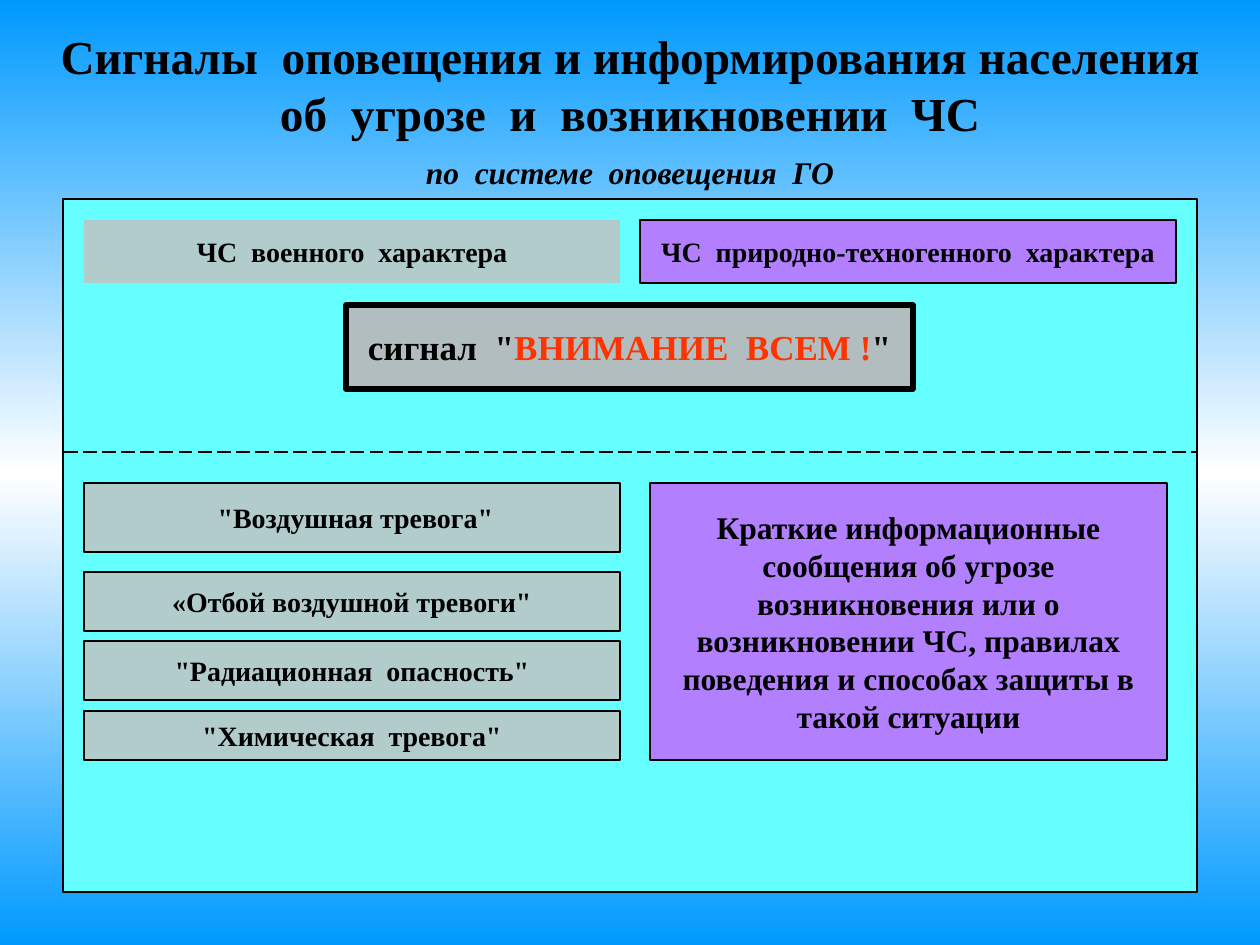
from copy import deepcopy

from lxml.etree import SubElement
from pptx import Presentation
from pptx.dml.color import RGBColor
from pptx.enum.dml import MSO_LINE
from pptx.enum.shapes import MSO_CONNECTOR, MSO_SHAPE
from pptx.enum.text import MSO_ANCHOR, MSO_AUTO_SIZE, PP_ALIGN
from pptx.oxml.ns import qn
from pptx.util import Emu, Pt

PX = 914400 // 126
FONT = "Times New Roman"
BLACK, RED, CYAN = "000000", "FF3300", "66FFFF"
ROSE, CORAL, MAGENTA = "FF9999", "FF7C80", "FF00FF"
BACKGROUND = [(0, "0099FF"), (0.5, "FFFFFF"), (1, "0099FF")]

TITLE = "Сигналы  оповещения и информирования населения\vоб  угрозе  и  возникновении  ЧС"
SUBTITLE = "по  системе  оповещения  ГО"
INFORMATION = ("Краткие информационные сообщения об угрозе возникновения или о "
               "возникновении ЧС, правилах поведения и способах защиты в такой ситуации")
PANEL = (63, 199, 1134, 693)
DIVIDER_Y = 452
LEFT, COLUMN_WIDTH = 84, 536

# text runs with colours, place, fill, line width, font size
BOXES = [
    ([("ЧС  военного  характера", BLACK)], (LEFT, 220, COLUMN_WIDTH, 63), ROSE, 0, 16),
    ([("ЧС  природно-техногенного  характера", BLACK)],
     (640, 220, COLUMN_WIDTH, 63), MAGENTA, 1, 16),
    ([('сигнал  "', BLACK), ("ВНИМАНИЕ  ВСЕМ !", RED), ('"', BLACK)],
     (346, 305, 567, 84), CORAL, 3, 20),
    ([(INFORMATION, BLACK)], (650, 483, 517, 277), MAGENTA, 1, 18),
]
# text, top, height, line width
ALARMS = [
    (' "Воздушная тревога"', 483, 69, 1.5),
    ("«Отбой воздушной тревоги\"", 572, 59, 1.5),
    ('"Радиационная  опасность"', 641, 59, 1),
    ('"Химическая  тревога"', 711, 49, 1),
]
BOXES += [([(text, BLACK)], (LEFT, top, COLUMN_WIDTH, height), ROSE, width, 16)
          for text, top, height, width in ALARMS]


def rgb(color):
    return RGBColor.from_string(color)


def px(*values):
    return [Emu(value * PX) for value in values]


def write(shape, runs, size, italic=False, anchor=MSO_ANCHOR.MIDDLE):
    frame = shape.text_frame
    settings = {"word_wrap": True, "auto_size": MSO_AUTO_SIZE.NONE, "vertical_anchor": anchor}
    for name, value in settings.items():
        setattr(frame, name, value)
    paragraph = frame.paragraphs[0]
    paragraph.alignment = PP_ALIGN.CENTER
    for text, color in runs:
        for index, line in enumerate(text.split("\v")):
            if index:
                paragraph.add_line_break()
            run = paragraph.add_run()
            run.text = line
            font = {"name": FONT, "size": Pt(size), "bold": True, "italic": italic}
            for name, value in font.items():
                setattr(run.font, name, value)
            run.font.color.rgb = rgb(color)


def add_box(slide, place, fill, line_width, opacity=None):
    shape = slide.shapes.add_shape(MSO_SHAPE.RECTANGLE, *px(*place))
    shape.shadow.inherit = False
    shape.fill.solid()
    shape.fill.fore_color.rgb = rgb(fill)
    if opacity:
        color = shape.fill._xPr.find(qn("a:solidFill"))[0]
        SubElement(color, qn("a:alpha")).set("val", str(opacity * 1000))
    if line_width:
        shape.line.color.rgb = rgb(BLACK)
        shape.line.width = Pt(line_width)
    else:
        shape.line.fill.background()
    return shape


def paint_background(slide):
    fill = slide.background.fill
    fill.gradient()
    fill.gradient_angle = 90
    stops = slide.element.find(".//" + qn("a:gsLst"))
    stops.insert(1, deepcopy(stops[0]))
    for stop, (position, color) in zip(fill.gradient_stops, BACKGROUND):
        stop.position = position
        stop.color.rgb = rgb(color)


def add_divider(slide):
    start = PANEL[0] + 1
    line = slide.shapes.add_connector(
        MSO_CONNECTOR.STRAIGHT, *px(start, DIVIDER_Y, start + PANEL[2], DIVIDER_Y))
    line.line.color.rgb = rgb(BLACK)
    line.line.width = Pt(1)
    line.line.dash_style = MSO_LINE.LONG_DASH
    SubElement(line.element.spPr, qn("a:effectLst"))


def main():
    presentation = Presentation()
    presentation.slide_width, presentation.slide_height = px(1260, 945)
    slide = presentation.slides.add_slide(presentation.slide_layouts[5])
    paint_background(slide)

    title = slide.shapes.title
    title.left, title.top, title.width, title.height = px(0, 21, 1260, 126)
    write(title, [(TITLE, BLACK)], 27)
    subtitle = slide.shapes.add_textbox(*px(0, 147, 1260, 50))
    write(subtitle, [(SUBTITLE, BLACK)], 18, italic=True, anchor=MSO_ANCHOR.TOP)

    add_box(slide, PANEL, CYAN, 0.75)
    add_divider(slide)
    for runs, place, fill, line_width, size in BOXES:
        write(add_box(slide, place, fill, line_width, opacity=50), runs, size)

    presentation.save("out.pptx")


if __name__ == "__main__":
    main()
